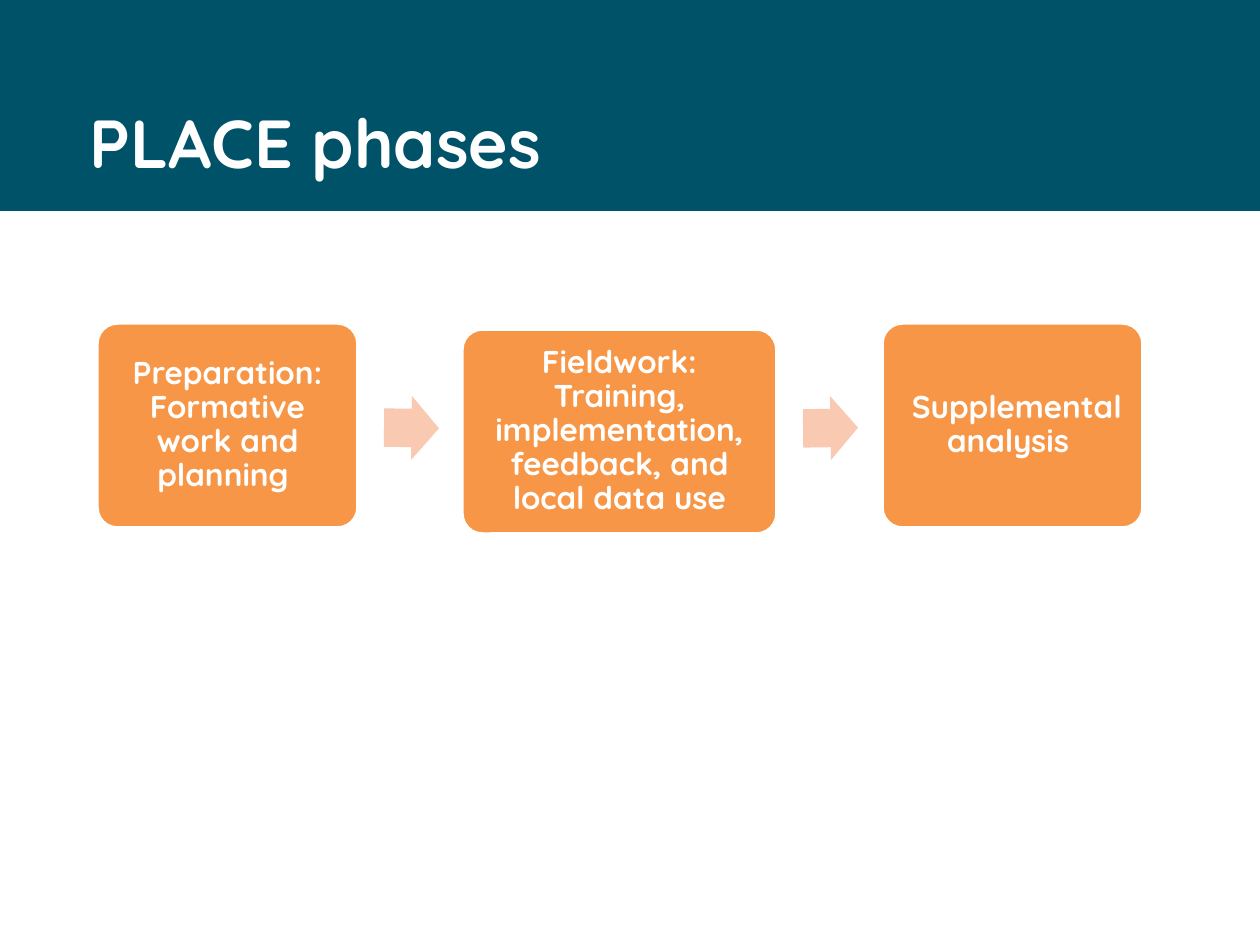
from dataclasses import dataclass

from pptx import Presentation
from pptx.dml.color import RGBColor
from pptx.enum.shapes import MSO_SHAPE
from pptx.enum.text import MSO_ANCHOR, MSO_AUTO_SIZE, PP_ALIGN
from pptx.util import Emu, Pt

RECTANGLE = MSO_SHAPE.RECTANGLE
ROUNDED = MSO_SHAPE.ROUNDED_RECTANGLE
RIGHT_ARROW = MSO_SHAPE.RIGHT_ARROW
TOP, MIDDLE = MSO_ANCHOR.TOP, MSO_ANCHOR.MIDDLE
LEFT, CENTER = PP_ALIGN.LEFT, PP_ALIGN.CENTER
NO_AUTOFIT = MSO_AUTO_SIZE.NONE

PX = 914400 / 126
TITLE_ONLY_LAYOUT = 5


@dataclass(frozen=True)
class Theme:
    font: str = "Quicksand"
    white: str = "FFFFFF"
    band: str = "005268"
    phase: str = "F79646"
    arrow: str = "FAC9B1"
    title_size: float = 38.8
    phase_size: float = 18
    outline: float = 2


THEME = Theme()

# Text, left, top, width of each phase
PHASES = [
    ("Preparation: Formative work and planning ", 97, 323, 261),
    ("Fieldwork: Training, implementation, feedback, and local data use", 462, 329, 315),
    (" Supplemental analysis ", 882, 323, 261),
]
PHASE_HEIGHT = 205

# Left and rotation of each arrow
ARROWS = [(384, 0.8), (803, 359.2)]


def px(length):
    return Emu(round(length * PX))


def add_filled_shape(slide, kind, box, color):
    shape = slide.shapes.add_shape(kind, *map(px, box))
    shape.shadow.inherit = False
    shape.fill.solid()
    shape.fill.fore_color.rgb = RGBColor.from_string(color)
    shape.line.fill.background()
    return shape


def set_text(shape, text, size, alignment, anchor):
    frame = shape.text_frame
    frame.text = text
    frame.word_wrap = True
    frame.auto_size = NO_AUTOFIT
    frame.vertical_anchor = anchor
    paragraph = frame.paragraphs[0]
    paragraph.alignment = alignment
    font = paragraph.runs[0].font
    font.name = THEME.font
    font.size = Pt(size)
    font.bold = True
    font.color.rgb = RGBColor.from_string(THEME.white)
    return frame


def add_title(slide, text):
    # The band lies behind the title placeholder
    band = add_filled_shape(slide, RECTANGLE, (0, 0, 1260, 211), THEME.band)
    title = slide.shapes.title
    title._element.addprevious(band._element)
    title.left, title.top, title.width, title.height = map(px, (77, 94, 1086, 139))
    set_text(title, text, THEME.title_size, LEFT, TOP)


def add_phase(slide, text, left, top, width):
    box = (left, top, width, PHASE_HEIGHT)
    shape = add_filled_shape(slide, ROUNDED, box, THEME.phase)
    shape.adjustments[0] = 0.1
    shape.line.color.rgb = RGBColor.from_string(THEME.white)
    shape.line.width = Pt(THEME.outline)
    frame = set_text(shape, text, THEME.phase_size, CENTER, MIDDLE)
    frame.margin_left = frame.margin_right = px(15)
    frame.margin_top = frame.margin_bottom = px(15)
    frame.paragraphs[0].line_spacing = 0.9


def add_arrow(slide, left, rotation):
    arrow = add_filled_shape(slide, RIGHT_ARROW, (left, 396, 55, 64), THEME.arrow)
    arrow.adjustments[0] = 0.6
    arrow.adjustments[1] = 0.5
    arrow.rotation = rotation


def main():
    presentation = Presentation()
    presentation.slide_width, presentation.slide_height = px(1260), px(945)
    slide = presentation.slides.add_slide(presentation.slide_layouts[TITLE_ONLY_LAYOUT])

    add_title(slide, "PLACE phases")
    for phase in PHASES:
        add_phase(slide, *phase)
    for arrow in ARROWS:
        add_arrow(slide, *arrow)

    presentation.save("out.pptx")


if __name__ == "__main__":
    main()
